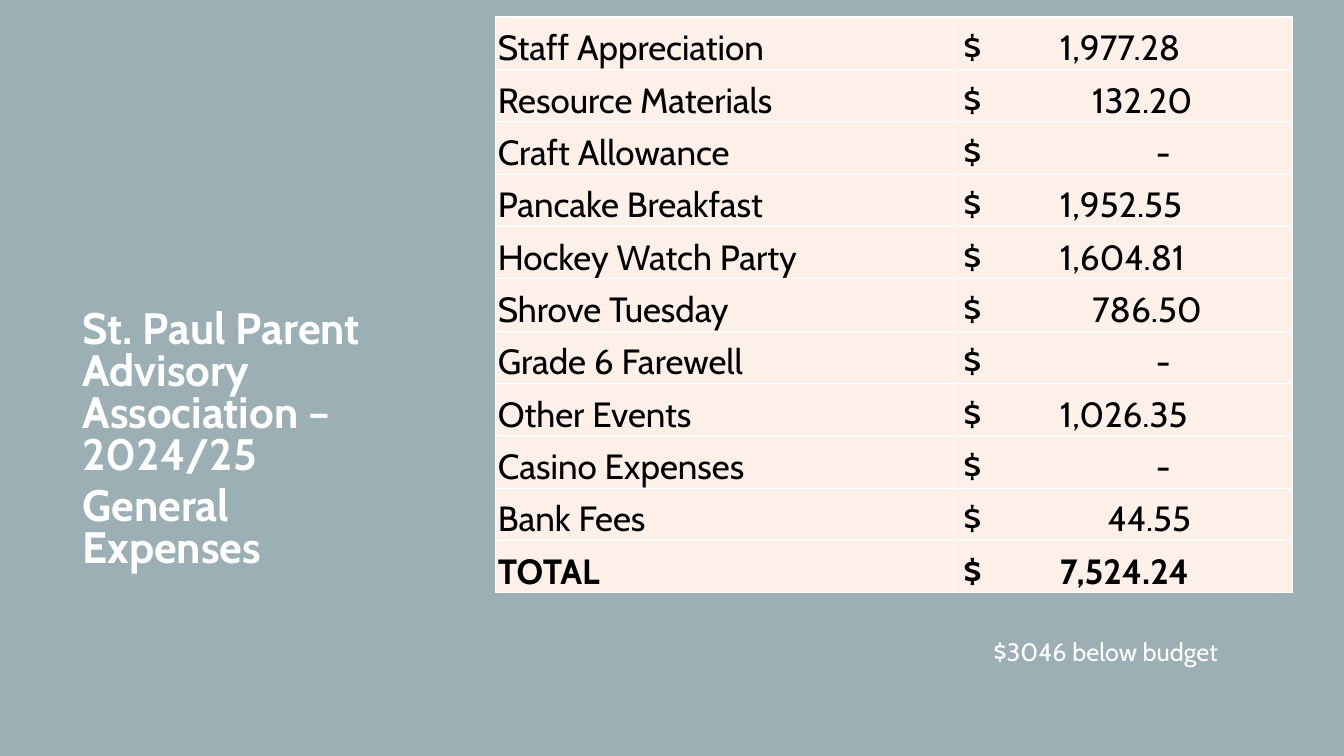
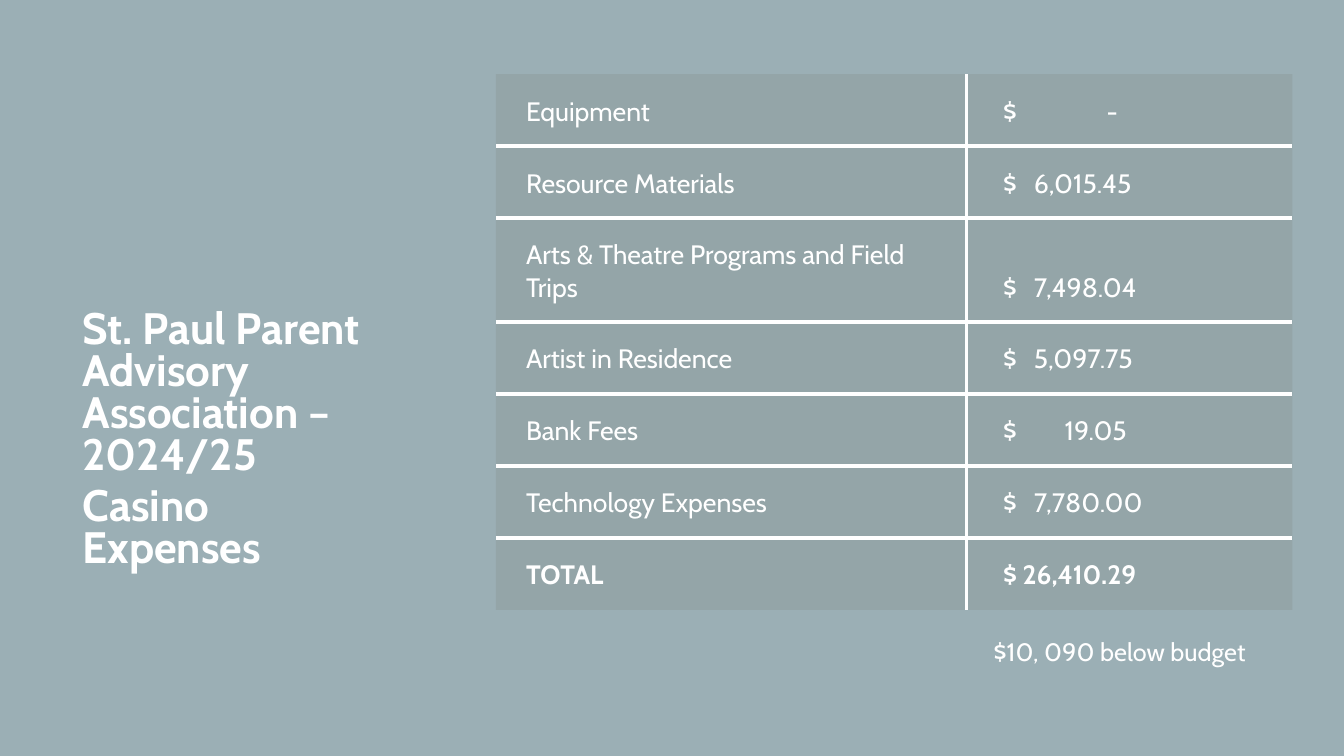
"""Build the two expense slides of the parent association."""
from dataclasses import dataclass

from lxml import etree
from pptx import Presentation
from pptx.dml.color import RGBColor
from pptx.enum import text
from pptx.oxml import ns
from pptx.util import Pt

FONT = "Cabin"
HEX = {"back": "9BAFB5", "white": "FFFFFF", "black": "000000",
       "cream": "FDF0E8", "grey": "878E8B"}
HEAD = "St. Paul Parent Advisory Association – 2024/25"


@dataclass(frozen=True)
class Look:
    top: float
    cols: tuple[float, float]
    high: float
    size: float
    ink: str
    fill: str
    alpha: int
    line: float
    frame: bool
    pad: tuple[float, float, float, float]
    shift: float
    tabs: dict[int, float]


@dataclass(frozen=True)
class Page:
    name: str
    note: str
    look: Look
    rows: tuple[tuple[str, str], ...]
    tall: dict[int, float]


PLAIN = Look(12.2, (327, 242), 37.4, 25, "black", "cream", 100, 1, True,
             (1.4, 1.4, 1.4, 0), 5.6, {8: 69, 6: 92, 5: 103, 1: 137.5})
SOFT = Look(53, (336.3, 232.6), 51.4, 19, "white", "grey", 30, 3, False,
            (21.6, 13, 13, 13), 4.4, {9: 14, 8: 22, 5: 44, 1: 74})

PAGES = (
    Page("General Expenses", "$3046 below budget", PLAIN, (
        ("Staff Appreciation", "1,977.28"),
        ("Resource Materials", "132.20"),
        ("Craft Allowance", "-"),
        ("Pancake Breakfast", "1,952.55"),
        ("Hockey Watch Party", "1,604.81"),
        ("Shrove Tuesday", "786.50"),
        ("Grade 6 Farewell", "-"),
        ("Other Events", "1,026.35"),
        ("Casino Expenses", "-"),
        ("Bank Fees", "44.55"),
        ("TOTAL", "7,524.24"),
    ), {}),
    Page("Casino Expenses", "$10, 090 below budget", SOFT, (
        ("Equipment", "-"),
        ("Resource Materials", "6,015.45"),
        ("Arts & Theatre Programs and Field Trips", "7,498.04"),
        ("Artist in Residence", "5,097.75"),
        ("Bank Fees", "19.05"),
        ("Technology Expenses", "7,780.00"),
        ("TOTAL", "26,410.29"),
    ), {2: 74.2}),
)


def style(para, size: float, ink: str, bold: bool = False) -> None:
    """Set the font of a paragraph."""
    font = para.font
    font.name, font.size, font.bold = FONT, Pt(size), bold
    font.color.rgb = RGBColor.from_string(HEX[ink])


def node(base, tag: str, **attrs):
    """Append a drawing element to a base element."""
    return etree.SubElement(base, ns.qn(f"a:{tag}"),
                            {key: str(val) for key, val in attrs.items()})


def edge(cell, side: str, width: float) -> None:
    """Draw one cell border, or clear it when the width is zero."""
    line = node(cell._tc.get_or_add_tcPr(), f"ln{side}", w=int(Pt(width)))
    if width:
        node(node(line, "solidFill"), "srgbClr", val=HEX["white"])
    else:
        node(line, "noFill")


def paint(cell, look: Look) -> None:
    """Fill a cell with the colour and opacity of its table."""
    cell.fill.solid()
    cell.fill.fore_color.rgb = RGBColor.from_string(HEX[look.fill])
    if look.alpha < 100:
        fill = cell._tc.tcPr.find(ns.qn("a:solidFill"))
        node(fill[0], "alpha", val=look.alpha * 1000)


def title(slide, name: str) -> None:
    """Place and format the slide title."""
    box = slide.shapes.title
    box.left, box.top, box.width, box.height = map(Pt, (51.8, 218.2, 226.8, 242))
    frame = box.text_frame
    frame.word_wrap = True
    frame.auto_size = text.MSO_AUTO_SIZE.NONE
    frame.vertical_anchor = text.MSO_ANCHOR.TOP
    frame.text = f"{HEAD}\n{name}"
    for para in frame.paragraphs:
        para.alignment = text.PP_ALIGN.LEFT
        para.line_spacing, para.space_after = 0.8, Pt(6)
        style(para, 31.4, "white", True)


def table(slide, page: Page) -> None:
    """Add the table of expenses."""
    look, last = page.look, len(page.rows) - 1
    highs = [page.tall.get(row, look.high) for row in range(last + 1)]
    grid = slide.shapes.add_table(
        last + 1, 2, Pt(354.2), Pt(look.top),
        Pt(sum(look.cols)), Pt(sum(highs))).table
    grid.first_row = grid.horz_banding = False
    for col, width in zip(grid.columns, look.cols):
        col.width = Pt(width)
    for row, (label, sum_) in enumerate(page.rows):
        grid.rows[row].height = Pt(highs[row])
        for col, words in enumerate((label, f"$\t{sum_}")):
            cell = grid.cell(row, col)
            left, top, right, base = look.pad
            cell.margin_left = Pt(left + col * look.shift)
            cell.margin_top, cell.margin_right = Pt(top), Pt(right)
            cell.margin_bottom = Pt(base)
            cell.vertical_anchor = text.MSO_ANCHOR.BOTTOM
            outer = {"L": col == 0, "R": col == 1,
                     "T": row == 0, "B": row == last}
            for side, rim in outer.items():
                edge(cell, side, look.line if look.frame or not rim else 0)
            paint(cell, look)
            para = cell.text_frame.paragraphs[0]
            para.text = words
            if col:
                stops = node(para._p.get_or_add_pPr(), "tabLst")
                node(stops, "tab", pos=int(Pt(look.tabs[len(sum_)])), algn="l")
            style(para, look.size, look.ink, row == last)


def note(slide, words: str) -> None:
    """Add the budget note below the table."""
    box = slide.shapes.add_textbox(Pt(702.7), Pt(450.7), Pt(230), Pt(29))
    box.text_frame.word_wrap = True
    para = box.text_frame.paragraphs[0]
    para.text = words
    style(para, 18, "white")


def main() -> None:
    """Build and save the slides."""
    deck = Presentation()
    deck.slide_width, deck.slide_height = Pt(960), Pt(540)
    back = deck.slide_master.background.fill
    back.solid()
    back.fore_color.rgb = RGBColor.from_string(HEX["back"])
    for page in PAGES:
        slide = deck.slides.add_slide(deck.slide_layouts[5])
        title(slide, page.name)
        table(slide, page)
        note(slide, page.note)
    deck.save("out.pptx")


if __name__ == "__main__":
    main()
